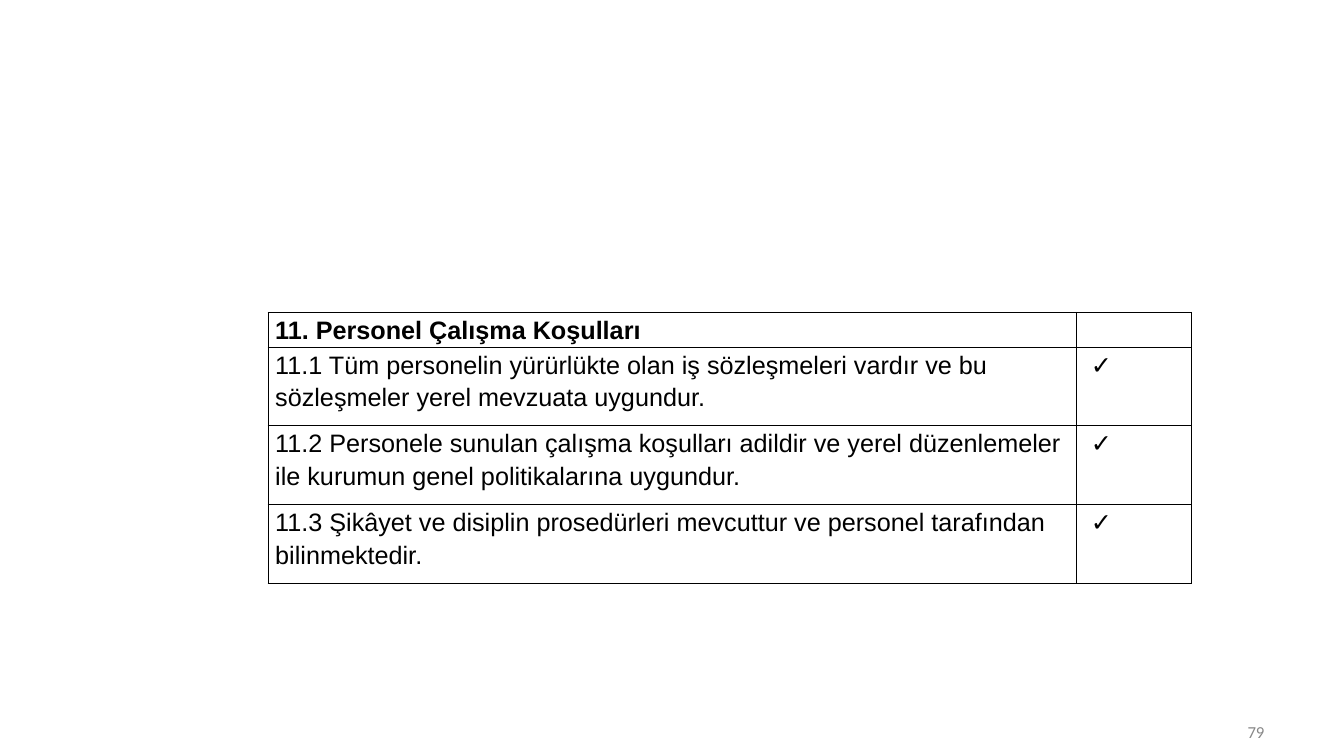
from lxml import etree
from pptx import Presentation
from pptx.dml.color import RGBColor
from pptx.enum.text import MSO_ANCHOR, PP_ALIGN
from pptx.oxml.ns import qn
from pptx.util import Pt

PX = 9144
MIDDLE = MSO_ANCHOR.MIDDLE
LEFT, RIGHT = PP_ALIGN.LEFT, PP_ALIGN.RIGHT
BLACK, GRAY = "000000", "888888"

TITLE = "11. Personel Çalışma Koşulları"
CONDITIONS = [
    "11.1 Tüm personelin yürürlükte olan iş sözleşmeleri vardır ve bu "
    "sözleşmeler yerel mevzuata uygundur.",
    "11.2 Personele sunulan çalışma koşulları adildir ve yerel düzenlemeler "
    "ile kurumun genel politikalarına uygundur.",
    "11.3 Şikâyet ve disiplin prosedürleri mevcuttur ve personel tarafından "
    "bilinmektedir.",
]
CHECK = " ✓"


def px(n):
    return int(n * PX)


def rgb(value):
    return RGBColor.from_string(value)


class SlideBuilder:
    font = "Arial"
    size = 18
    color = BLACK

    def __init__(self, slide):
        self.s = slide

    def fill_text(self, tf, text, font=None, size=None, color=None, bold=False, align=LEFT):
        tf.text = text
        p = tf.paragraphs[0]
        p.alignment = align
        for r in p.runs:
            r.font.name = font or self.font
            r.font.size = Pt(size or self.size)
            r.font.color.rgb = rgb(color or self.color)
            r.font.bold = bold
        return p

    def text(self, x, y, w, h, text, **style):
        tf = self.s.shapes.add_textbox(px(x), px(y), px(w), px(h)).text_frame
        tf.word_wrap = True
        tf.vertical_anchor = MIDDLE
        self.fill_text(tf, text, **style)

    def border(self, cell):
        tcPr = cell._tc.get_or_add_tcPr()
        for side in ("a:lnL", "a:lnR", "a:lnT", "a:lnB"):
            ln = etree.SubElement(tcPr, qn(side), w=str(Pt(1)))
            fill = etree.SubElement(ln, qn("a:solidFill"))
            etree.SubElement(fill, qn("a:srgbClr"), val=self.color)

    def cell(self, cell, text, header):
        cell.margin_left = cell.margin_right = px(7)
        cell.margin_top = cell.margin_bottom = 0
        self.border(cell)
        cell.fill.background()
        if text:
            p = self.fill_text(cell.text_frame, text, bold=header)
            p.line_spacing = 1.15
            p.space_after = Pt(0 if header else 8)

    def table(self, x, y, widths, heights, rows):
        frame = self.s.shapes.add_table(
            len(rows), len(widths), px(x), px(y), px(sum(widths)), px(sum(heights)))
        table = frame.table
        table.first_row = table.horz_banding = False
        for col, w in zip(table.columns, widths):
            col.width = px(w)
        for i, (row, h, texts) in enumerate(zip(table.rows, heights, rows)):
            row.height = px(h)
            for cell, text in zip(row.cells, texts):
                self.cell(cell, text, header=i == 0)


def main():
    prs = Presentation()
    prs.slide_width, prs.slide_height = px(1333), px(750)
    b = SlideBuilder(prs.slides.add_slide(prs.slide_layouts[6]))
    b.text(964, 706, 300, 40, "79", font="Calibri", size=12, color=GRAY, align=RIGHT)
    rows = [(TITLE, "")] + [(text, CHECK) for text in CONDITIONS]
    b.table(266, 310, [802, 114], [32] + [78] * len(CONDITIONS), rows)
    prs.save("out.pptx")


if __name__ == "__main__":
    main()
